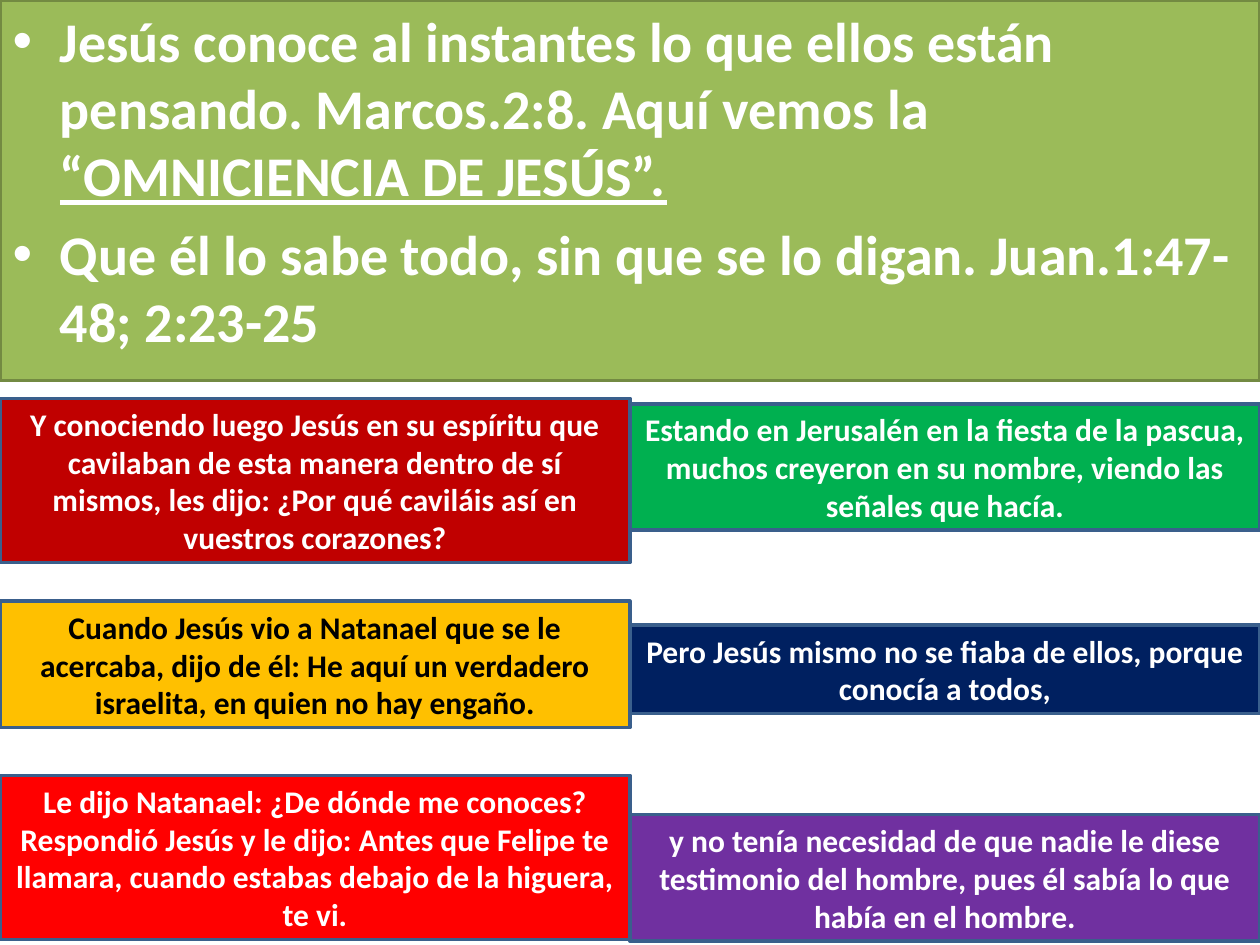
"""Build the slide on the omniscience of Jesus with its six Bible verses."""
import pptx
import pptx.dml.color
import pptx.enum.shapes
import pptx.enum.text
import pptx.util

Cm, Pt = pptx.util.Cm, pptx.util.Pt
RGB = pptx.dml.color.RGBColor.from_string

THEME = {
    "font": "Calibri", "body_size": 32, "verse_size": 18, "line_width": 2,
    "light": "FFFFFF", "dark": "000000",
    "body_fill": "9BBB59", "body_line": "738A42", "verse_line": "3A5F8C",
    "crimson": "C00000", "gold": "FFC000", "red": "FF0000",
    "green": "00B050", "navy": "002060", "purple": "7030A0",
}
WIDTH, HEIGHT, BODY_HEIGHT = 25.4, 19.05, 7.67
LINE_HEIGHT, PADDING = 0.76, 0.27

POINTS = [
    [("Jesús conoce al instantes lo que ellos están pensando. Marcos.2:8. Aquí vemos la ", False),
     ("“OMNICIENCIA DE JESÚS”.", True)],
    [("Que él lo sabe todo, sin que se lo digan. Juan.1:47-48; 2:23-25", False)],
]
# column: (top, lines, fill, text colour, verse)
VERSES = [
    [
        (8.03, 4, "crimson", "light",
         "Y conociendo luego Jesús en su espíritu que cavilaban de esta manera dentro de sí mismos, "
         "les dijo: ¿Por qué caviláis así en vuestros corazones?"),
        (12.12, 3, "gold", "dark",
         "Cuando Jesús vio a Natanael que se le acercaba, dijo de él: "
         "He aquí un verdadero israelita, en quien no hay engaño."),
        (15.63, 4, "red", "light",
         "Le dijo Natanael: ¿De dónde me conoces? Respondió Jesús y le dijo: "
         "Antes que Felipe te llamara, cuando estabas debajo de la higuera, te vi."),
    ],
    [
        (8.14, 3, "green", "light",
         "Estando en Jerusalén en la fiesta de la pascua, muchos creyeron en su nombre, "
         "viendo las señales que hacía."),
        (12.6, 2, "navy", "light",
         "Pero Jesús mismo no se fiaba de ellos, porque conocía a todos,"),
        (16.42, 3, "purple", "light",
         "y no tenía necesidad de que nadie le diese testimonio del hombre, "
         "pues él sabía lo que había en el hombre."),
    ],
]


def paint(sp, fill, line):
    sp.fill.solid()
    sp.fill.fore_color.rgb = RGB(THEME[fill])
    sp.line.color.rgb = RGB(THEME[line])
    sp.line.width = Pt(THEME["line_width"])


def set_font(p, size, color):
    p.font.name = THEME["font"]
    p.font.size = Pt(THEME[size])
    p.font.bold = True
    p.font.color.rgb = RGB(THEME[color])


def add_points(s):
    sp = s.placeholders[1]
    sp.left, sp.top, sp.width, sp.height = Cm(0), Cm(0), Cm(WIDTH), Cm(BODY_HEIGHT)
    paint(sp, "body_fill", "body_line")
    tf = sp.text_frame
    for i, runs in enumerate(POINTS):
        p = tf.add_paragraph() if i else tf.paragraphs[0]
        set_font(p, "body_size", "light")
        for text, underlined in runs:
            r = p.add_run()
            r.text = text
            if underlined:
                r.font.underline = True


def add_verse(s, left, top, lines, fill, color, verse):
    sp = s.shapes.add_shape(pptx.enum.shapes.MSO_SHAPE.RECTANGLE, Cm(left), Cm(top),
                            Cm(WIDTH / 2), Cm(PADDING + lines * LINE_HEIGHT))
    sp.shadow.inherit = False
    paint(sp, fill, "verse_line")
    tf = sp.text_frame
    tf.word_wrap = True
    tf.auto_size = pptx.enum.text.MSO_AUTO_SIZE.SHAPE_TO_FIT_TEXT
    p = tf.paragraphs[0]
    p.text = verse
    p.alignment = pptx.enum.text.PP_ALIGN.CENTER
    set_font(p, "verse_size", color)


def main():
    prs = pptx.Presentation()
    prs.slide_width, prs.slide_height = Cm(WIDTH), Cm(HEIGHT)
    s = prs.slides.add_slide(prs.slide_layouts[1])
    title = s.shapes.title.element
    title.getparent().remove(title)
    add_points(s)
    for column, verses in enumerate(VERSES):
        for verse in verses:
            add_verse(s, column * WIDTH / 2, *verse)
    prs.save("out.pptx")


if __name__ == "__main__":
    main()
